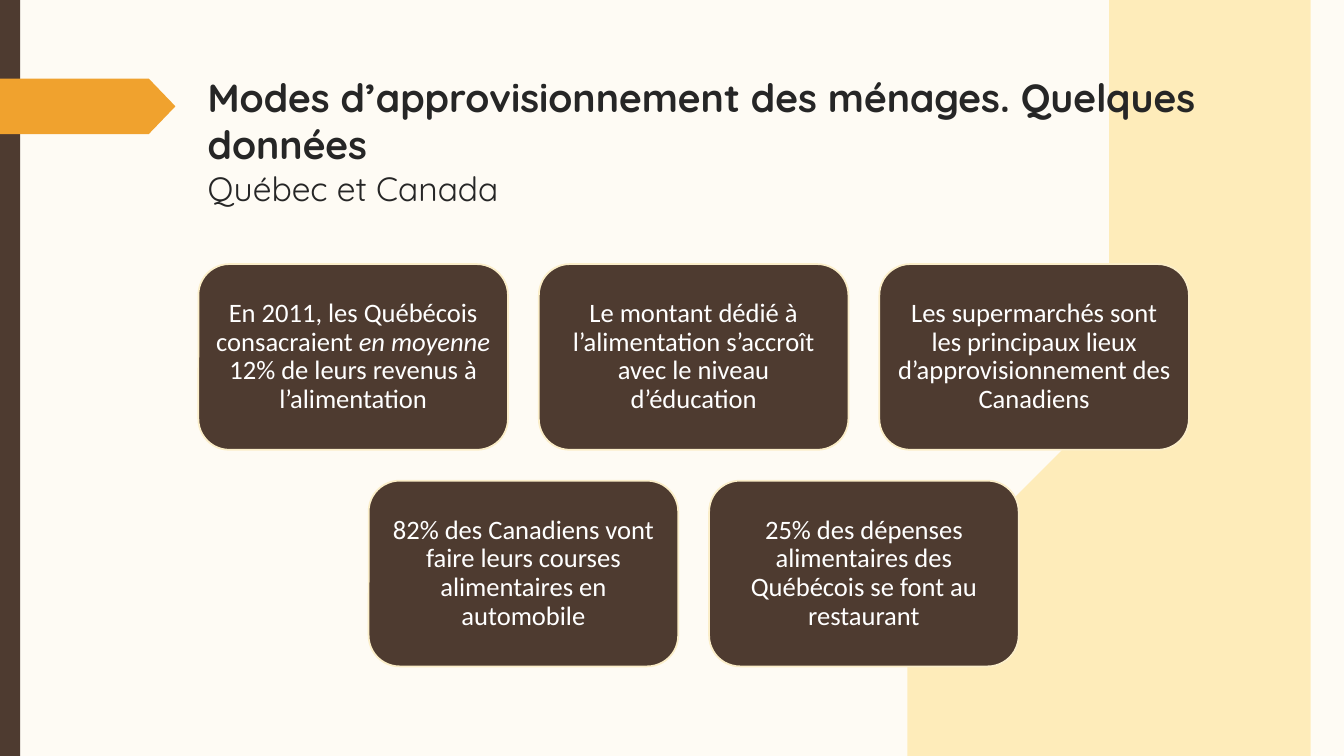
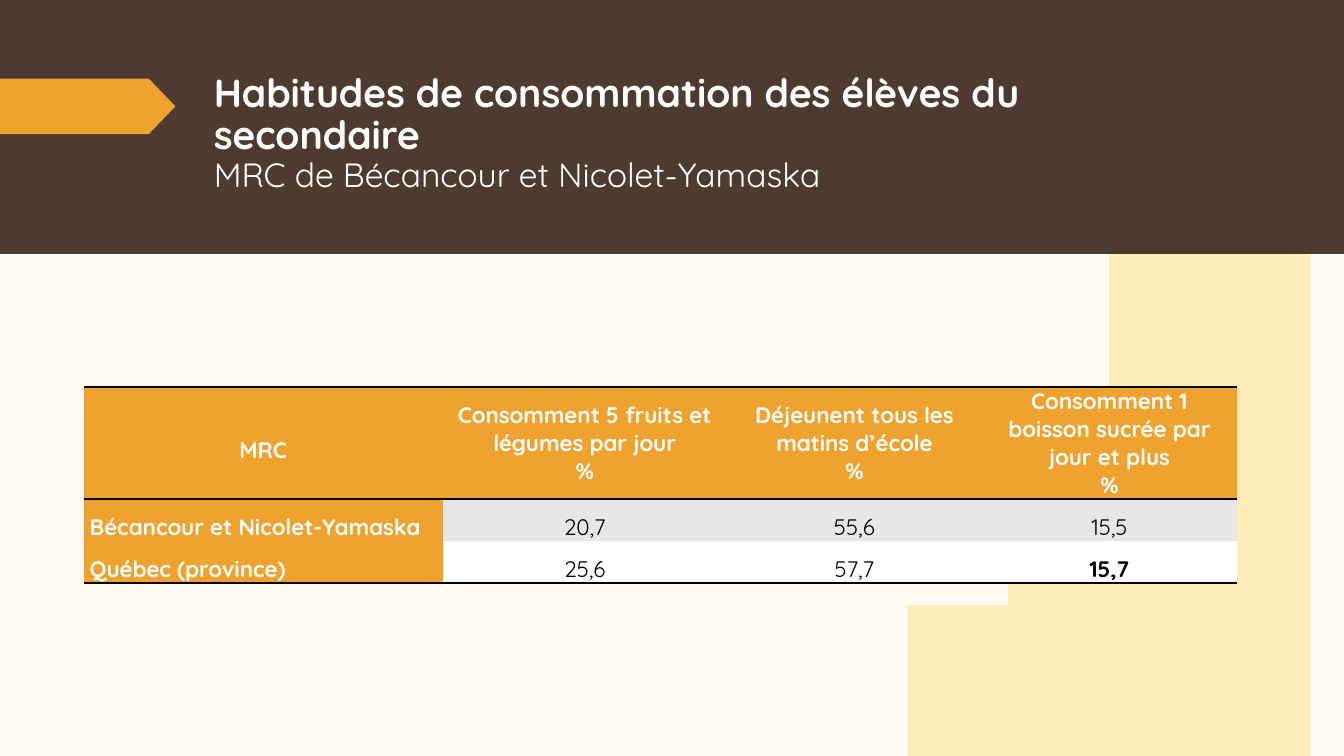
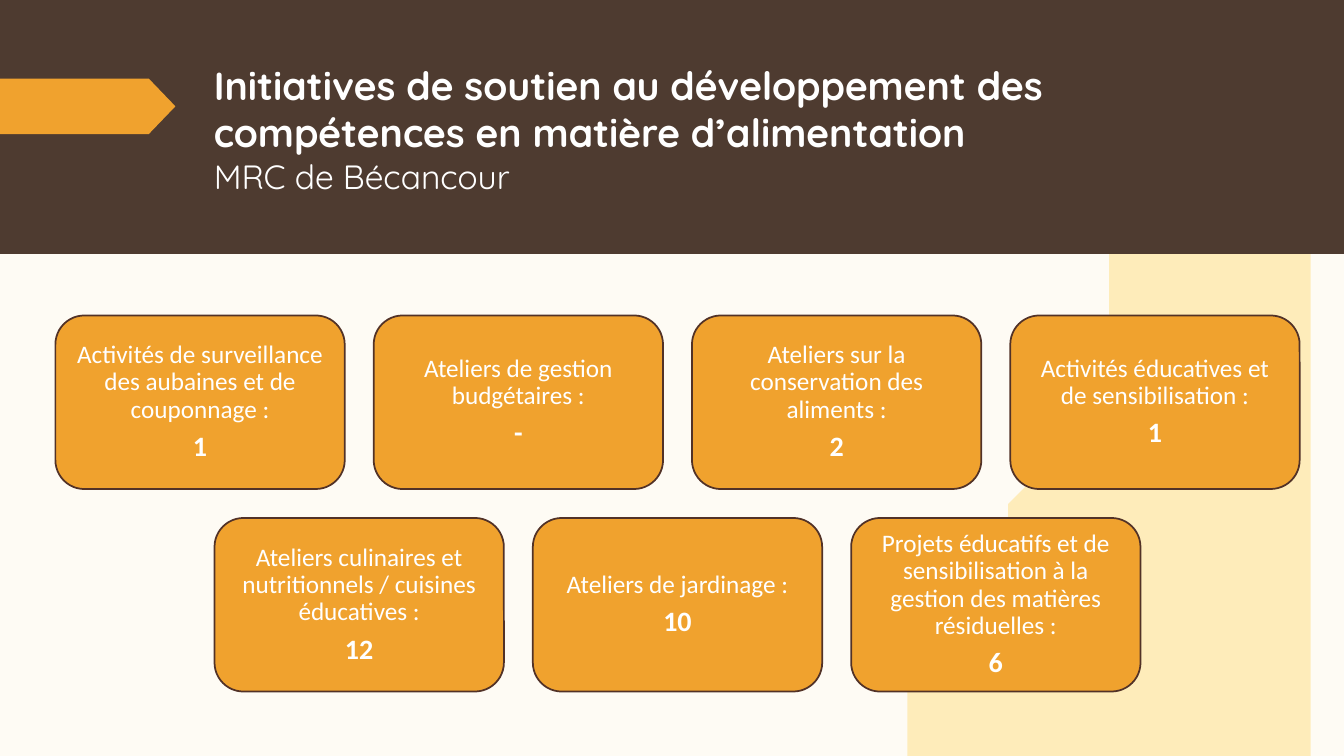
from math import sqrt

from lxml.etree import SubElement
from pptx import Presentation
from pptx.dml.color import RGBColor
from pptx.enum.shapes import MSO_SHAPE as SHAPE
from pptx.enum.text import MSO_ANCHOR as ANCHOR, MSO_AUTO_SIZE as AUTO, PP_ALIGN as ALIGN
from pptx.oxml.ns import qn
from pptx.util import Inches, Pt

COLORS = {
    "cream": "FEFBF4", "sand": "FEECBA", "brown": "4E3B30", "orange": "F0A22E",
    "card_edge": "FBEEC9", "dark_edge": "523227", "ink": "262626",
    "black": "000000", "white": "FFFFFF", "grey": "E7E7E7",
}
HEAD, BODY = "Quicksand", "Calibri"


def add_run(p, text, size, color, font, bold=False, italic=False):
    r = p.add_run()
    r.text = text
    r.font.size, r.font.name = Pt(size), font
    r.font.bold, r.font.italic = bold, italic
    r.font.color.rgb = RGBColor.from_string(COLORS[color])


def paint(sp, fill, edge=None):
    sp.shadow.inherit = False
    sp.fill.solid()
    sp.fill.fore_color.rgb = RGBColor.from_string(COLORS[fill])
    if edge:
        sp.line.color.rgb = RGBColor.from_string(COLORS[edge])
        sp.line.width = Pt(1.25)
    else:
        sp.line.fill.background()


prs = Presentation()
prs.slide_width, prs.slide_height = Inches(13.33), Inches(7.5)
master = prs.slide_master
master.background.fill.solid()
master.background.fill.fore_color.rgb = RGBColor.from_string(COLORS["cream"])

titles = [
    ("Modes d’approvisionnement des ménages. Quelques données", "Québec et Canada",
     (1.96, 0.68, 10.62, 1.4), 1.0, "ink", (0.2, 7.5)),
    ("Habitudes de consommation des élèves du secondaire",
     "MRC de Bécancour et Nicolet-Yamaska",
     (2.02, 0.68, 10.26, 1.4), 0.9, "white", (13.33, 2.52)),
    ("Initiatives de soutien au développement des compétences en matière d’alimentation",
     "MRC de Bécancour",
     (2.02, 0.56, 10.26, 1.59), 1.0, "white", (13.33, 2.52)),
]
for heading, place, box, spacing, color, band_size in titles:
    s = prs.slides.add_slide(prs.slide_layouts[5])
    title = s.shapes.title
    title.left, title.top, title.width, title.height = map(Inches, box)
    tf = title.text_frame
    tf.word_wrap, tf.auto_size, tf.vertical_anchor = True, AUTO.NONE, ANCHOR.TOP
    p = tf.paragraphs[0]
    p.alignment, p.line_spacing = ALIGN.LEFT, spacing
    add_run(p, heading, 28, color, HEAD, bold=True)
    p.add_line_break()
    add_run(p, place, 24, color, HEAD)

    band = s.shapes.add_shape(SHAPE.RECTANGLE, 0, 0, *map(Inches, band_size))
    paint(band, "brown")
    title.element.addprevious(band.element)
    tag = s.shapes.add_shape(SHAPE.PENTAGON, 0, Inches(0.78), Inches(1.74), Inches(0.55))
    tag.adjustments[0] = 0.48
    paint(tag, "orange")

households, habits, initiatives = prs.slides

cx, cy, radius = 3.21, 1.84, 7.77
arc = []
for i in range(61):
    y = i * 7.5 / 60
    arc.append((cx + sqrt(radius ** 2 - (y - cy) ** 2), y))
outline = households.shapes.build_freeform(13.33, 0, scale=Inches(1))
outline.add_line_segments(arc + [(13.33, 7.5)], close=True)
curve = outline.convert_to_shape()
paint(curve, "sand")
master.shapes.element.insert(2, curve.element)

household_cards = [
    [
        [[("En 2011, les Québécois consacraient ", 19, False, False),
          ("en moyenne", 19, False, True),
          (" 12% de leurs revenus à l’alimentation", 19, False, False)]],
        [[("Le montant dédié à l’alimentation s’accroît avec le niveau d’éducation",
           19, False, False)]],
        [[("Les supermarchés sont les principaux lieux d’approvisionnement des Canadiens",
           19, False, False)]],
    ],
    [
        [[("82% des Canadiens vont faire leurs courses alimentaires en automobile",
           19, False, False)]],
        [[("25% des dépenses alimentaires des Québécois se font au restaurant",
           19, False, False)]],
    ],
]
counts = [
    [
        ("Activités de surveillance des aubaines et de couponnage :", "1"),
        ("Ateliers de gestion budgétaires :", "-"),
        ("Ateliers sur la conservation des aliments :", "2"),
        ("Activités éducatives et de sensibilisation :", "1"),
    ],
    [
        ("Ateliers culinaires et nutritionnels / cuisines éducatives :", "12"),
        ("Ateliers de jardinage :", "10"),
        ("Projets éducatifs et de sensibilisation à la gestion des matières résiduelles :", "6"),
    ],
]
initiative_cards = [
    [[[(label, 18, False, False)], [(count, 20, True, False)]] for label, count in row]
    for row in counts
]
grids = [
    (households, household_cards, 6.88, 2.62, 3.07, 0.08, "brown", "card_edge"),
    (initiatives, initiative_cards, 6.72, 3.13, 2.87, 0.07, "orange", "dark_edge"),
]
for s, rows, center, top, width, inset, fill, edge in grids:
    height, gap = 0.6 * width, 0.1 * width
    for i, row in enumerate(rows):
        left = center - (len(row) * (width + gap) - gap) / 2
        for j, paragraphs in enumerate(row):
            sp = s.shapes.add_shape(
                SHAPE.ROUNDED_RECTANGLE,
                Inches(left + j * (width + gap)), Inches(top + i * (height + gap)),
                Inches(width), Inches(height))
            paint(sp, fill, edge)
            tf = sp.text_frame
            tf.word_wrap, tf.vertical_anchor = True, ANCHOR.MIDDLE
            tf.margin_left = tf.margin_right = Inches(inset)
            tf.margin_top = tf.margin_bottom = Inches(inset)
            for k, runs in enumerate(paragraphs):
                p = tf.add_paragraph() if k else tf.paragraphs[0]
                p.alignment, p.line_spacing = ALIGN.CENTER, 0.9
                if k < len(paragraphs) - 1:
                    p.space_after = Pt(6.3)
                for text, size, bold, italic in runs:
                    add_run(p, text, size, "white", BODY, bold, italic)

records = [
    [["MRC"], ["Consomment 5 fruits et légumes par jour", "%"],
     ["Déjeunent tous les matins d’école", "%"],
     ["Consomment 1 boisson sucrée par jour et plus", "%"]],
    [["Bécancour et Nicolet-Yamaska"], ["20,7"], ["55,6"], ["15,5"]],
    [["Québec (province)"], ["25,6"], ["57,7"], ["15,7"]],
]
row_fills = ["orange", "grey", "white"]
row_borders = [[("a:lnB", 1.5), ("a:lnT", 2)], [], [("a:lnB", 1.5)]]
frame = habits.shapes.add_table(3, 4, Inches(0.83), Inches(3.84), Inches(11.44), Inches(1.94))
frame.element.find(".//" + qn("a:tableStyleId")).text = "{2D5ABB26-0587-4C30-8999-92F81FD0307C}"
table = frame.table
table.first_row = table.horz_banding = False
for column, width in zip(table.columns, [3.56, 2.82, 2.53, 2.53]):
    column.width = Inches(width)
for row, height in zip(table.rows, [1.1, 0.42, 0.42]):
    row.height = Inches(height)
for i, record in enumerate(records):
    for j, lines in enumerate(record):
        cell = table.cell(i, j)
        label = i == 0 or j == 0
        cell.vertical_anchor = ANCHOR.MIDDLE
        cell.margin_left = cell.margin_right = Inches(0.06)
        cell.margin_top = cell.margin_bottom = 0
        cell.fill.solid()
        cell.fill.fore_color.rgb = RGBColor.from_string(COLORS["orange" if label else row_fills[i]])
        for k, text in enumerate(lines):
            p = cell.text_frame.add_paragraph() if k else cell.text_frame.paragraphs[0]
            p.alignment = ALIGN.LEFT if i and j == 0 else ALIGN.CENTER
            p.line_spacing = 1.0 if i == 0 and j else 1.5
            add_run(p, text, 16, "white" if label else "black", HEAD,
                    bold=label or text == "15,7")
        tcPr = cell._tc.get_or_add_tcPr()
        for side, weight in row_borders[i]:
            ln = SubElement(tcPr, qn(side), w=str(Pt(weight)))
            SubElement(SubElement(ln, qn("a:solidFill")), qn("a:srgbClr"), val=COLORS["black"])
            tcPr.insert(0, ln)

prs.save("out.pptx")
